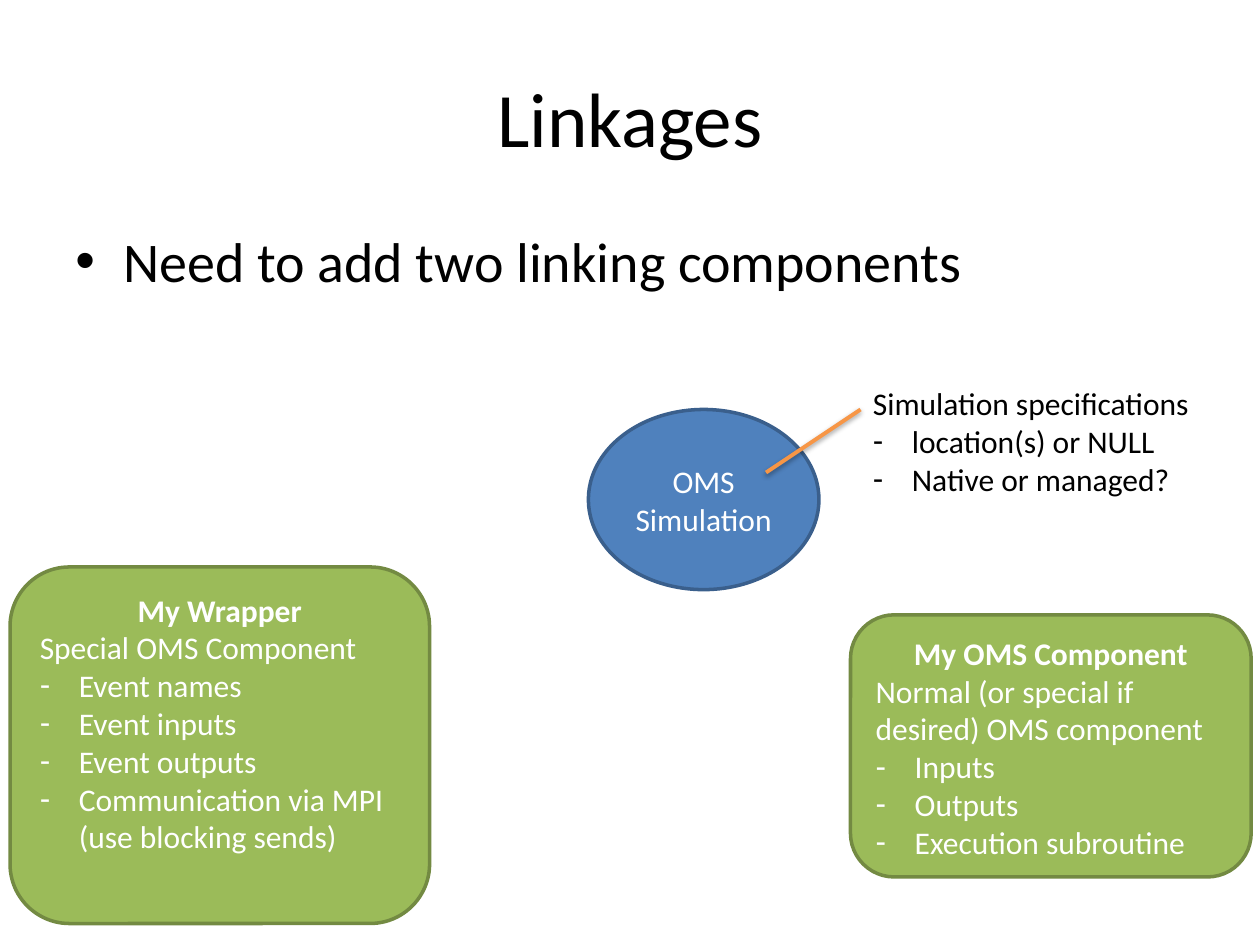
"""Builds the Linkages slide with two linking components around a simulation."""
from dataclasses import dataclass
from typing import Optional

from lxml.etree import SubElement
from pptx import Presentation
from pptx.dml.color import RGBColor
from pptx.enum.shapes import MSO_CONNECTOR, MSO_SHAPE
from pptx.enum.text import MSO_ANCHOR, MSO_AUTO_SIZE, PP_ALIGN
from pptx.oxml.ns import qn
from pptx.shapes.base import BaseShape
from pptx.slide import Slide
from pptx.util import Pt

PX = 9144
FONT = "Calibri"
BLACK = RGBColor(0x00, 0x00, 0x00)
WHITE = RGBColor(0xFF, 0xFF, 0xFF)
BLUE = RGBColor(0x4F, 0x81, 0xBD)
DARK_BLUE = RGBColor(0x3A, 0x5F, 0x8C)
GREEN = RGBColor(0x9B, 0xBB, 0x59)
DARK_GREEN = RGBColor(0x73, 0x8A, 0x42)
ORANGE = RGBColor(0xF7, 0x96, 0x46)


@dataclass(frozen=True)
class Line:
    text: str
    bold: bool = False
    centered: bool = False
    bullet: Optional[str] = None
    indent: int = 31


@dataclass(frozen=True)
class Block:
    box: tuple[int, int, int, int]
    lines: tuple[Line, ...]
    size: int = 18
    color: RGBColor = BLACK
    anchor: MSO_ANCHOR = MSO_ANCHOR.TOP
    wrap: bool = True
    preset: Optional[MSO_SHAPE] = None
    fill: Optional[RGBColor] = None
    outline: Optional[RGBColor] = None


def dashes(*texts: str) -> tuple[Line, ...]:
    """Return one dash-bulleted line for each text."""
    return tuple(Line(text, bullet="-") for text in texts)


def component(box: tuple[int, int, int, int], name: str, summary: str, *items: str) -> Block:
    """Return a green component box with a heading, a summary and a list."""
    lines = (Line(name, bold=True, centered=True), Line(summary), *dashes(*items))
    return Block(box, lines, color=WHITE, preset=MSO_SHAPE.ROUNDED_RECTANGLE,
                 fill=GREEN, outline=DARK_GREEN)


BLOCKS = (
    Block((467, 325, 183, 143), (Line("OMS Simulation", centered=True),), color=WHITE,
          anchor=MSO_ANCHOR.MIDDLE, preset=MSO_SHAPE.OVAL, fill=BLUE, outline=DARK_BLUE),
    component((675, 488, 318, 208), "My OMS Component",
              "Normal (or special if desired) OMS component",
              "Inputs", "Outputs", "Execution subroutine"),
    component((8, 450, 333, 283), "My Wrapper", "Special OMS Component",
              "Event names", "Event inputs", "Event outputs",
              "Communication via MPI (use blocking sends)"),
    Block((50, 30, 900, 125), (Line("Linkages", centered=True),), size=44,
          anchor=MSO_ANCHOR.MIDDLE),
    Block((50, 175, 900, 75),
          (Line("Need to add two linking components", bullet="•", indent=38),), size=32),
    Block((683, 300, 274, 101),
          (Line("Simulation specifications"),
           *dashes("location(s) or NULL", "Native or managed?")), wrap=False),
)


def add_shape(slide: Slide, block: Block) -> BaseShape:
    """Add the text box or filled preset shape that holds a block."""
    box = [length * PX for length in block.box]
    if block.preset is None:
        return slide.shapes.add_textbox(*box)
    shape = slide.shapes.add_shape(block.preset, *box)
    shape.shadow.inherit = False
    shape.fill.solid()
    shape.fill.fore_color.rgb = block.fill
    shape.line.color.rgb = block.outline
    shape.line.width = Pt(2)
    return shape


def add_block(slide: Slide, block: Block) -> None:
    """Add a block and write its lines."""
    frame = add_shape(slide, block).text_frame
    frame_format = {
        "word_wrap": block.wrap,
        "vertical_anchor": block.anchor,
        "auto_size": MSO_AUTO_SIZE.NONE if block.wrap else MSO_AUTO_SIZE.SHAPE_TO_FIT_TEXT,
    }
    for name, value in frame_format.items():
        setattr(frame, name, value)
    for index, line in enumerate(block.lines):
        paragraph = frame.add_paragraph() if index else frame.paragraphs[0]
        paragraph.alignment = PP_ALIGN.CENTER if line.centered else PP_ALIGN.LEFT
        run = paragraph.add_run()
        run.text = line.text
        font_format = {"name": FONT, "size": Pt(block.size), "bold": line.bold}
        for name, value in font_format.items():
            setattr(run.font, name, value)
        run.font.color.rgb = block.color
        if line.bullet:
            properties = paragraph._p.get_or_add_pPr()
            properties.set("marL", str(line.indent * PX))
            properties.set("indent", str(-line.indent * PX))
            SubElement(properties, qn("a:buFont"), typeface="Arial")
            SubElement(properties, qn("a:buChar"), char=line.bullet)


def add_pointer(slide: Slide, start: tuple[int, int], end: tuple[int, int]) -> None:
    """Add the orange line with its soft shadow below."""
    ends = [length * PX for length in (*start, *end)]
    connector = slide.shapes.add_connector(MSO_CONNECTOR.STRAIGHT, *ends)
    connector.line.color.rgb = ORANGE
    connector.line.width = Pt(2.25)
    effects = SubElement(connector._element.spPr, qn("a:effectLst"))
    shadow = SubElement(effects, qn("a:outerShdw"), blurRad=str(Pt(3.1)), dist=str(Pt(1.6)),
                        dir="5400000", rotWithShape="0")
    color = SubElement(shadow, qn("a:srgbClr"), val=str(BLACK))
    SubElement(color, qn("a:alpha"), val="38000")


def main() -> None:
    """Build and save the slide."""
    presentation = Presentation()
    presentation.slide_width = 1000 * PX
    presentation.slide_height = 750 * PX
    slide = presentation.slides.add_slide(presentation.slide_layouts[6])
    for block in BLOCKS:
        add_block(slide, block)
    add_pointer(slide, (608, 375), (683, 325))
    presentation.save("out.pptx")


if __name__ == "__main__":
    main()
